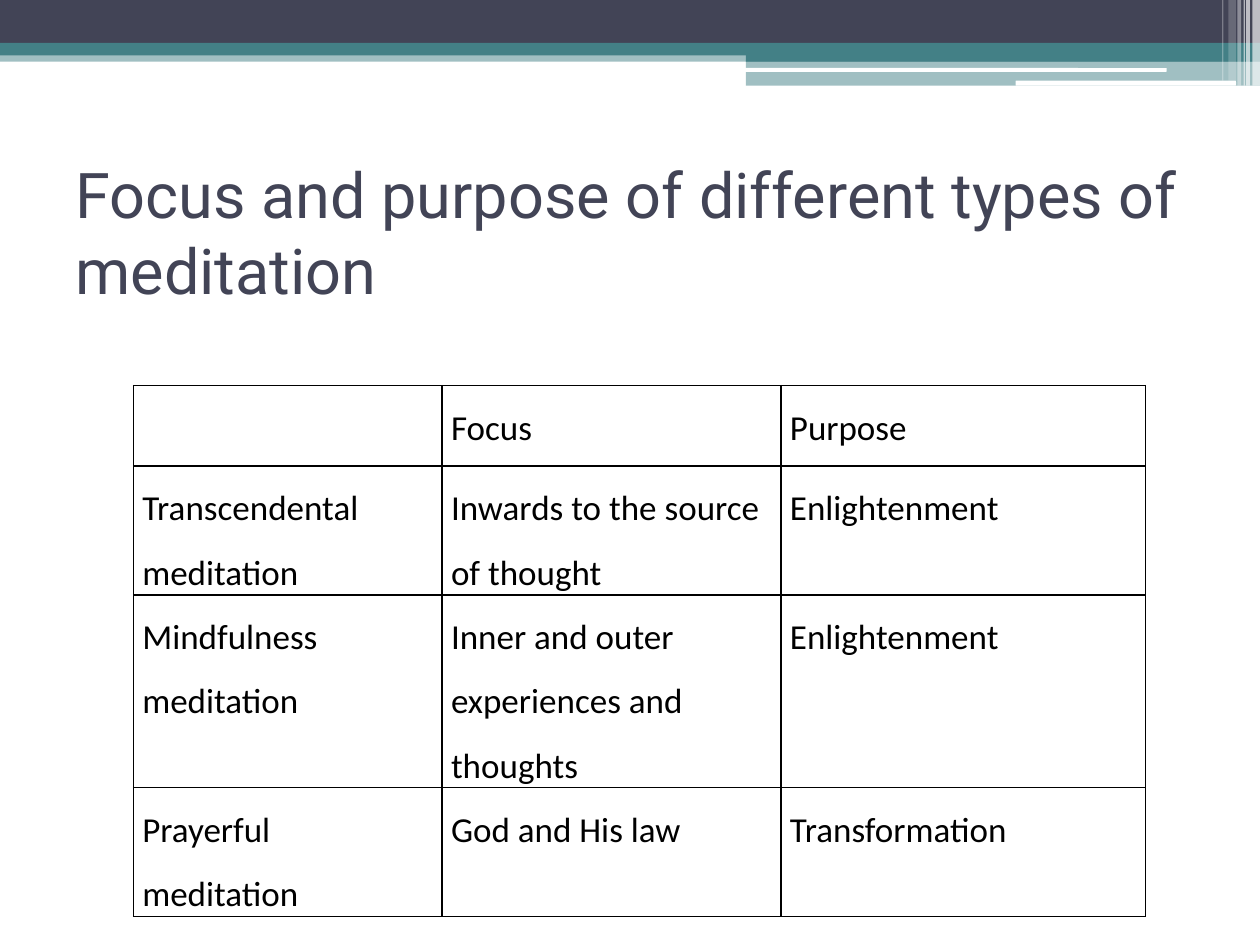
import dataclasses

import lxml.etree
import pptx
import pptx.dml.color
import pptx.enum.shapes
import pptx.enum.text
import pptx.oxml.ns
import pptx.util

COLUMNS, ROWS = 100, 75


@dataclasses.dataclass(frozen=True)
class Theme:
    """Colours, fonts and type sizes of the deck."""

    navy: str = "424456"
    teal: str = "438086"
    white: str = "FFFFFF"
    black: str = "000000"
    title_font: str = "Roboto"
    body_font: str = "Calibri"
    title_size: int = 36
    body_size: int = 20
    rule_width: int = 1


def colour(value):
    """Return an RGB colour for a hex value."""
    return pptx.dml.color.RGBColor.from_string(value)


def apply(target, values):
    """Set each named attribute on the target."""
    for name, value in values.items():
        setattr(target, name, value)


def child(parent, tag, **attributes):
    """Append an XML element with a namespaced tag."""
    return lxml.etree.SubElement(parent, pptx.oxml.ns.qn(tag), attributes)


class Painter:
    """Draws styled elements on the current slide in grid units."""

    def __init__(self, deck, theme):
        """Add a title-only slide to the deck."""
        self.deck, self.theme = deck, theme
        self.page = deck.slides.add_slide(deck.slide_layouts[5])

    def across(self, columns):
        """Convert grid columns to a slide length."""
        return round(self.deck.slide_width * columns / COLUMNS)

    def down(self, rows):
        """Convert grid rows to a slide length."""
        return round(self.deck.slide_height * rows / ROWS)

    def place(self, left, top, width, height):
        """Convert a grid area to slide lengths."""
        return self.across(left), self.down(top), self.across(width), self.down(height)

    def add_span(self, para, text, font, size, tint):
        """Add a formatted span to a paragraph."""
        span = para.add_run()
        span.text = text
        apply(span.font, {"name": font, "size": pptx.util.Pt(size)})
        span.font.color.rgb = colour(tint)

    def title(self, text, area):
        """Move, fill and format the title placeholder."""
        box = self.page.shapes.title
        apply(box, dict(zip(("left", "top", "width", "height"), self.place(*area))))
        apply(box.text_frame, {
            "word_wrap": True,
            "auto_size": pptx.enum.text.MSO_AUTO_SIZE.NONE,
            "vertical_anchor": pptx.enum.text.MSO_ANCHOR.MIDDLE,
        })
        para = box.text_frame.paragraphs[0]
        para.alignment = pptx.enum.text.PP_ALIGN.LEFT
        self.add_span(para, text, self.theme.title_font, self.theme.title_size, self.theme.navy)

    def band(self, area, tint, opacity=100, rounded=False):
        """Draw a plain filled bar."""
        kinds = pptx.enum.shapes.MSO_SHAPE
        kind = kinds.ROUNDED_RECTANGLE if rounded else kinds.RECTANGLE
        bar = self.page.shapes.add_shape(kind, *self.place(*area))
        bar.shadow.inherit = False
        bar.fill.solid()
        bar.fill.fore_color.rgb = colour(tint)
        bar.line.fill.background()
        if opacity < 100:
            tone = bar._element.spPr.find(".//" + pptx.oxml.ns.qn("a:srgbClr"))
            child(tone, "a:alpha", val=str(opacity * 1000))

    def cell(self, cell, text):
        """Rule, clear and fill one table cell."""
        inset = self.across(0.7)
        apply(cell, {"margin_left": inset, "margin_right": inset,
                     "margin_top": 0, "margin_bottom": 0})
        properties = cell._tc.get_or_add_tcPr()
        width = str(pptx.util.Pt(self.theme.rule_width))
        for side in "LRTB":
            line = child(properties, f"a:ln{side}", w=width)
            child(child(line, "a:solidFill"), "a:srgbClr", val=self.theme.black)
        cell.fill.background()
        if text:
            para = cell.text_frame.paragraphs[0]
            para.line_spacing = 1.5
            self.add_span(para, text, self.theme.body_font, self.theme.body_size, self.theme.black)

    def table(self, left, top, widths, heights, rows):
        """Draw a ruled table from rows of text."""
        area = self.place(left, top, sum(widths), sum(heights))
        table = self.page.shapes.add_table(len(rows), len(widths), *area).table
        apply(table, {"first_row": False, "horz_banding": False})
        for column, width in zip(table.columns, widths):
            column.width = self.across(width)
        for row, height, texts in zip(table.rows, heights, rows):
            row.height = self.down(height)
            for cell, text in zip(row.cells, texts):
                self.cell(cell, text)


def main():
    """Build and save the deck."""
    deck = pptx.Presentation()
    apply(deck, {"slide_width": pptx.util.Inches(10), "slide_height": pptx.util.Inches(7.5)})
    theme = Theme()
    painter = Painter(deck, theme)

    for area, tint, opacity in (
        ((0, 4, 100, 0.9), theme.teal, 50),
        ((0, 0, 100, 3.4), theme.navy, 100),
        ((0, 3.4, 100, 1), theme.teal, 100),
        ((59.2, 3.9, 40.8, 1), theme.teal, 100),
        ((59.2, 4.8, 40.8, 2), theme.teal, 50),
    ):
        painter.band(area, tint, opacity)
    for area in ((59.1, 5.4, 33.5, 0.3), (80.6, 6.4, 17.5, 0.4)):
        painter.band(area, theme.white, rounded=True)
    for left, width, height, opacity in (
        (99.4, 0.6, 6.8, 65),
        (98.9, 0.3, 6.8, 65),
        (98.7, 0.1, 6.8, 60),
        (98.2, 0.3, 6.8, 40),
        (97.5, 0.6, 6.4, 20),
        (97, 0.1, 6.4, 30),
    ):
        painter.band((left, 0, width, height), theme.white, opacity)

    painter.title("Focus and purpose of different types of meditation", (5, 12.5, 90, 11.7))
    painter.table(10.6, 30.6, (24.5, 26.9, 28.9), (6.4, 10.2, 15.3, 10.2), (
        ("", "Focus", "Purpose"),
        ("Transcendental meditation", "Inwards to the source of thought", "Enlightenment"),
        ("Mindfulness meditation", "Inner and outer experiences and thoughts", "Enlightenment"),
        ("Prayerful meditation", "God and His law", "Transformation"),
    ))
    deck.save("out.pptx")


if __name__ == "__main__":
    main()
